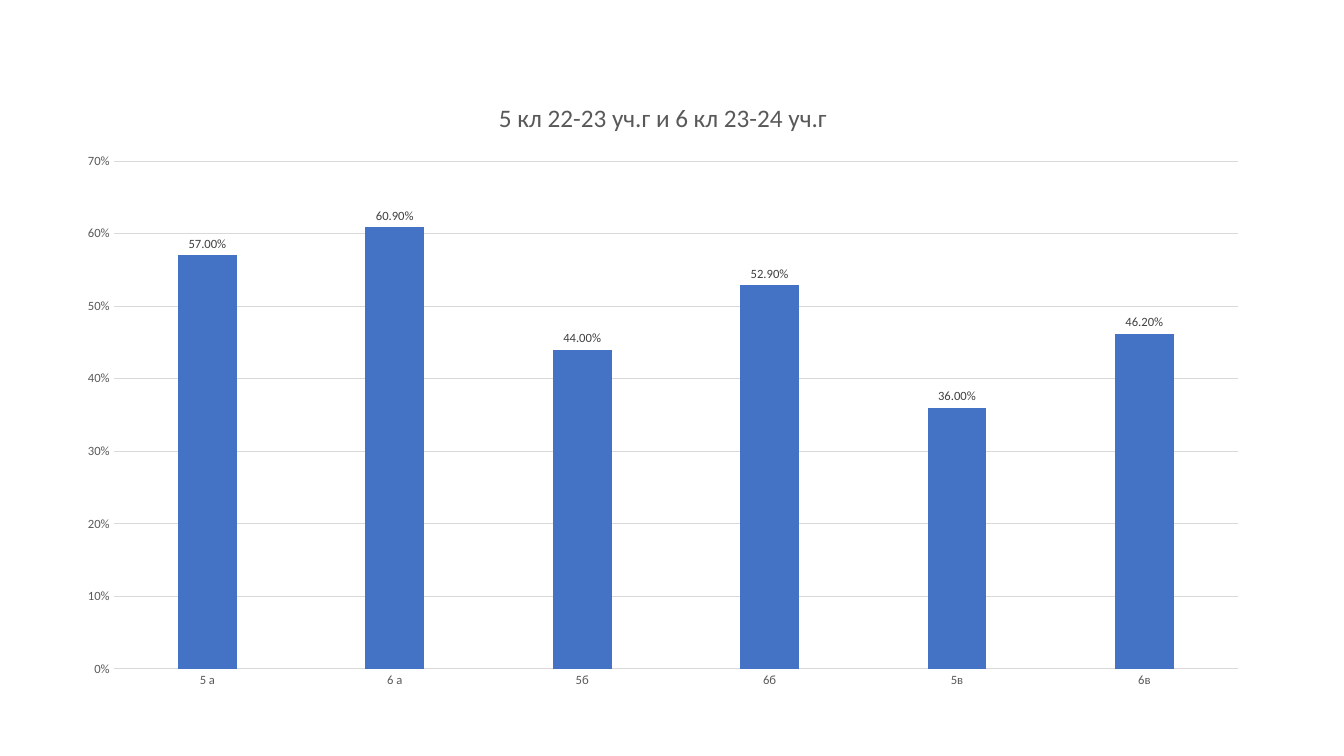
from dataclasses import dataclass

from pptx import Presentation
from pptx import util as u
from pptx.chart.data import CategoryChartData
from pptx.dml.color import RGBColor
from pptx.enum import chart as ch


@dataclass(frozen=True)
class Theme:
    font: str = "Calibri"
    bar: str = "4472C4"
    grid: str = "D9D9D9"
    muted: str = "595959"
    label: str = "404040"
    title_pt: int = 18
    small_pt: int = 9
    line_pt: float = 0.75


T = Theme()
PX = 914400 / 100.8


def px(n):
    return u.Emu(round(n * PX))


def style_font(font, size, color):
    for name, value in {"name": T.font, "size": u.Pt(size), "bold": False}.items():
        setattr(font, name, value)
    font.color.rgb = RGBColor.from_string(color)


# Slide
prs = Presentation()
prs.slide_width, prs.slide_height = px(1344), px(756)
s = prs.slides.add_slide(prs.slide_layouts[6])

# Chart data
data = CategoryChartData(number_format="0.00%")
data.categories = ["5 а", "6 а", "5б", "6б", "5в", "6в"]
data.add_series("Series 1", [0.57, 0.609, 0.44, 0.529, 0.36, 0.462])
chart = s.shapes.add_chart(ch.XL_CHART_TYPE.COLUMN_CLUSTERED,
                           px(64), px(78), px(1198), px(622), data).chart
chart.has_legend = False
style_font(chart.font, T.small_pt, T.muted)

# Title
chart.has_title = True
chart.chart_title.include_in_layout = False
p = chart.chart_title.text_frame.paragraphs[0]
r = p.add_run()
r.text = "5 кл 22-23 уч.г и 6 кл 23-24 уч.г"
style_font(r.font, T.title_pt, T.muted)

# Axes and gridlines
cat, val = chart.category_axis, chart.value_axis
for axis in (cat, val):
    axis.major_tick_mark = axis.minor_tick_mark = ch.XL_TICK_MARK.NONE
    style_font(axis.tick_labels.font, T.small_pt, T.muted)
val.has_major_gridlines = True
for line in (cat.format.line, val.major_gridlines.format.line):
    line.color.rgb = RGBColor.from_string(T.grid)
    line.width = u.Pt(T.line_pt)
val.format.line.fill.background()
for name, value in {"minimum_scale": 0, "maximum_scale": 0.7, "major_unit": 0.1}.items():
    setattr(val, name, value)
val.tick_labels.number_format = "0%"
val.tick_labels.number_format_is_linked = False

# Bars
plot = chart.plots[0]
for name, value in {"gap_width": 219, "overlap": -27, "vary_by_categories": False}.items():
    setattr(plot, name, value)
bars = plot.series[0]
bars.invert_if_negative = False
bars.format.fill.solid()
bars.format.fill.fore_color.rgb = RGBColor.from_string(T.bar)

# Data labels
labels = bars.data_labels
for name, value in {"show_value": True, "number_format": "0.00%",
                    "number_format_is_linked": False,
                    "position": ch.XL_LABEL_POSITION.OUTSIDE_END}.items():
    setattr(labels, name, value)
style_font(labels.font, T.small_pt, T.label)

prs.save("out.pptx")
